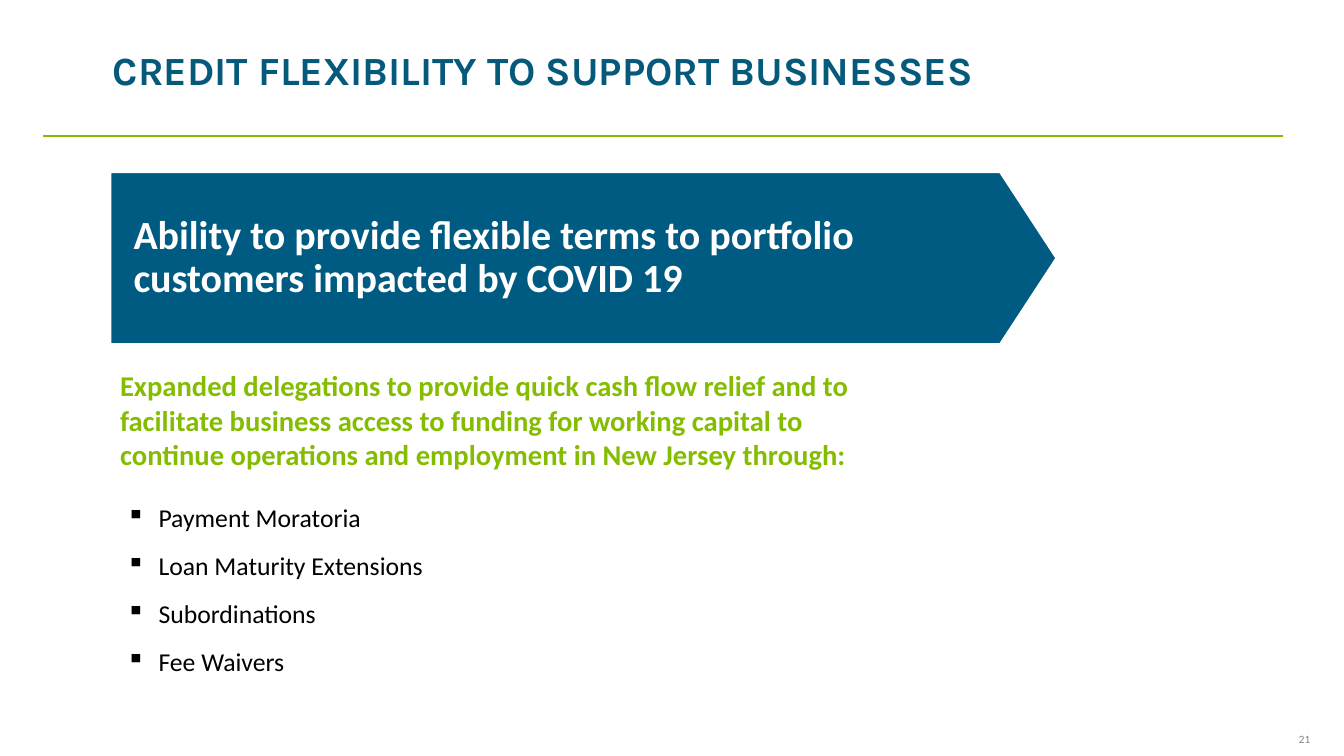
from dataclasses import dataclass

from lxml.etree import SubElement
from pptx import Presentation
from pptx.dml.color import RGBColor as Color
from pptx.enum.shapes import MSO_CONNECTOR as Connector, MSO_SHAPE as Shape
from pptx.enum.text import MSO_ANCHOR as Anchor, MSO_AUTO_SIZE as AutoSize, PP_ALIGN as Align
from pptx.oxml.ns import qn
from pptx.util import Pt


@dataclass(frozen=True)
class Theme:
    heading_font: str = "Karla"
    body_font: str = "Calibri"
    title_color: str = "05597B"
    banner_color: str = "005B82"
    green: str = "84BD00"
    black: str = "000000"
    white: str = "FFFFFF"
    gray: str = "808080"
    large: float = 28
    medium: float = 20
    body: float = 18
    small: float = 7.8


class SlideBuilder:
    def __init__(self, page, theme):
        self.page = page
        self.theme = theme

    def add_span(self, para, text, size, color, bold=False, font=None):
        span = para.add_run()
        span.text = text
        span.font.name = font or self.theme.body_font
        span.font.size = Pt(size)
        span.font.bold = bold
        span.font.color.rgb = Color.from_string(color)

    def text_box(self, left, top, width, height, wrap=True, grow=True):
        box = self.page.shapes.add_textbox(Pt(left), Pt(top), Pt(width), Pt(height))
        frame = box.text_frame
        frame.word_wrap = wrap
        frame.auto_size = AutoSize.SHAPE_TO_FIT_TEXT if grow else AutoSize.NONE
        return frame

    def label(self, place, text, size, color, font=None):
        frame = self.text_box(*place)
        self.add_span(frame.paragraphs[0], text, size, color, True, font)

    def page_number(self, place, text):
        frame = self.text_box(*place, wrap=False)
        frame.margin_left = frame.margin_top = frame.margin_right = frame.margin_bottom = 0
        frame.vertical_anchor = Anchor.MIDDLE
        para = frame.paragraphs[0]
        para.alignment = Align.RIGHT
        self.add_span(para, text, self.theme.small, self.theme.gray)

    def bullet_list(self, place, items, indent, gap, columns):
        frame = self.text_box(*place, grow=False)
        frame._txBody.bodyPr.set("numCol", str(columns))
        for index, item in enumerate(items):
            para = frame.add_paragraph() if index else frame.paragraphs[0]
            properties = para._p.get_or_add_pPr()
            properties.set("marL", str(Pt(indent)))
            properties.set("indent", str(-Pt(indent)))
            SubElement(properties, qn("a:buChar")).set("char", "▪")
            para.space_after = Pt(gap)
            self.add_span(para, item, self.theme.body, self.theme.black)

    def rule(self, left, right, top):
        line = self.page.shapes.add_connector(
            Connector.STRAIGHT, Pt(left), Pt(top), Pt(right), Pt(top))
        line.line.color.rgb = Color.from_string(self.theme.green)
        line.line.width = Pt(1.5)
        SubElement(line._element.spPr, qn("a:effectLst"))

    def banner(self, left, top, width, height, point, lines):
        arrow = self.page.shapes.add_shape(
            Shape.PENTAGON, Pt(left), Pt(top), Pt(width), Pt(height))
        arrow.adjustments[0] = point / height
        arrow.shadow.inherit = False
        arrow.fill.solid()
        arrow.fill.fore_color.rgb = Color.from_string(self.theme.banner_color)
        arrow.line.color.rgb = Color.from_string(self.theme.white)
        arrow.line.width = Pt(2)
        frame = arrow.text_frame
        frame.word_wrap = True
        frame.vertical_anchor = Anchor.MIDDLE
        frame.margin_left, frame.margin_right = Pt(16.5), Pt(60)
        para = frame.paragraphs[0]
        para.alignment = Align.LEFT
        para.line_spacing = 0.9
        for index, text in enumerate(lines):
            if index:
                para.add_line_break()
            self.add_span(para, text, self.theme.large, self.theme.white, True)


def main():
    deck = Presentation()
    deck.slide_width, deck.slide_height = Pt(941), Pt(529.2)
    theme = Theme()
    slide = SlideBuilder(deck.slides.add_slide(deck.slide_layouts[6]), theme)

    slide.page_number((908, 512.6, 9.4, 9.4), "21")
    slide.bullet_list(
        (81.4, 347.8, 749.5, 154),
        ["Payment Moratoria", "Loan Maturity Extensions", "Subordinations", "Fee Waivers"],
        indent=22.5, gap=12, columns=2)
    slide.label((72, 28, 836, 41), "CREDIT FLEXIBILITY TO SUPPORT BUSINESSES",
                theme.large, theme.title_color, theme.heading_font)
    slide.rule(30.2, 898, 95)
    slide.label(
        (77, 254.2, 566.6, 80),
        "Expanded delegations to provide quick cash flow relief and to facilitate business "
        "access to funding for working capital to continue operations and employment in "
        "New Jersey through:",
        theme.medium, theme.green)
    slide.banner(77, 120.2, 663, 121, 39.6, [
        "Ability to provide flexible terms to portfolio ",
        "customers impacted by COVID 19"])
    deck.save("out.pptx")


if __name__ == "__main__":
    main()
